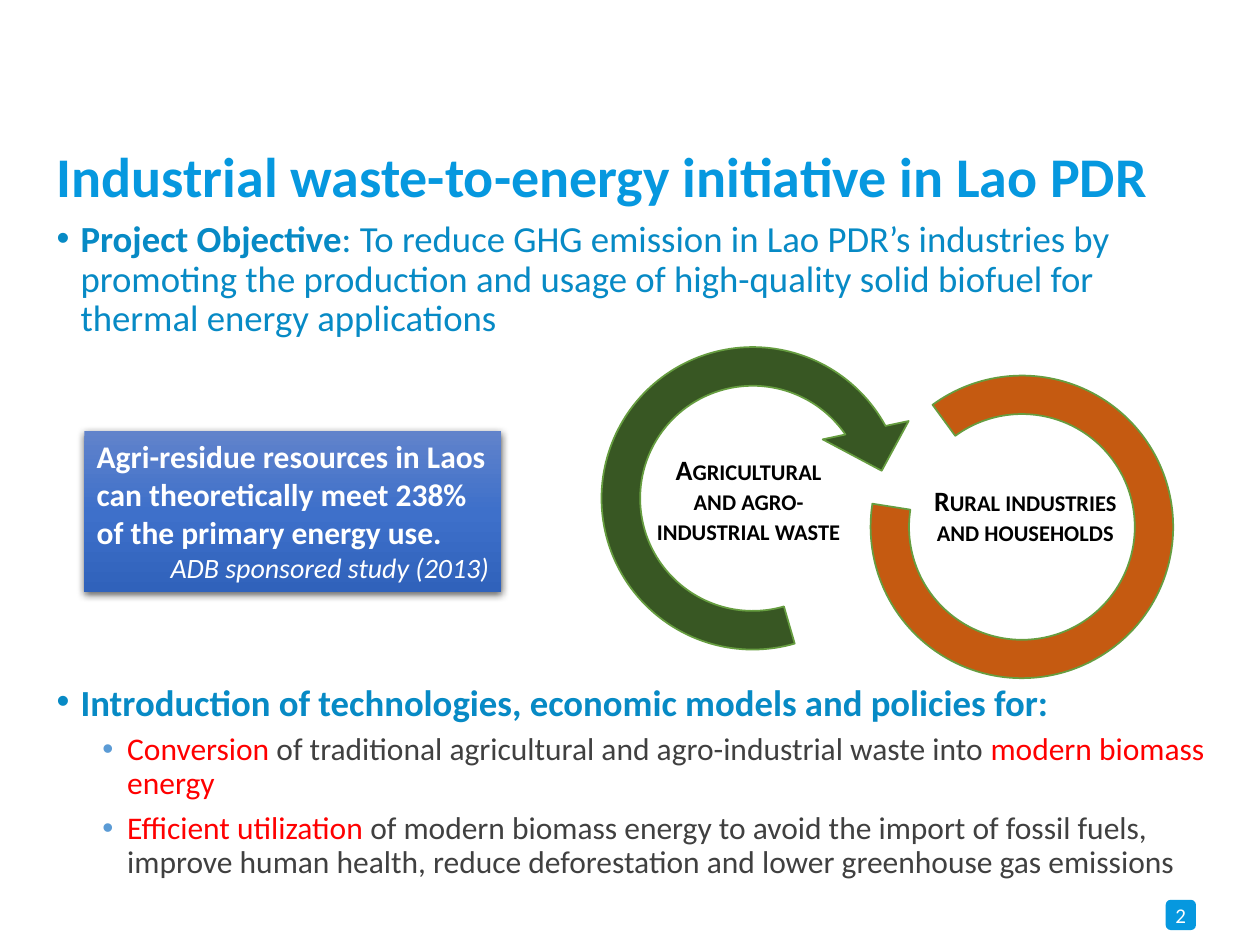
from dataclasses import dataclass

from pptx import Presentation
from pptx.dml.color import RGBColor
from pptx.enum.shapes import MSO_SHAPE as SHAPE
from pptx.enum.text import MSO_ANCHOR as ANCHOR, MSO_AUTO_SIZE as FIT, PP_ALIGN as ALIGN
from pptx.oxml import parse_xml
from pptx.oxml.ns import nsdecls
from pptx.util import Cm, Pt


@dataclass(frozen=True)
class Theme:
    font: str = "Calibri"
    title: str = "0698DF"
    lead: str = "078AC5"
    accent: str = "FF0000"
    body: str = "404040"
    bullet: str = "5B9BD5"
    white: str = "FFFFFF"
    black: str = "000000"
    green: str = "385723"
    orange: str = "C55A11"
    outline: str = "669D40"
    gradient: tuple = ((0, "6183CB"), (50, "3E70CA"), (100, "3062BB"))
    title_size: int = 32
    lead_size: int = 21
    text_size: int = 18
    label_size: int = 16
    number_size: int = 12


T = Theme()
TITLE = dict(size=T.title_size, color=T.title, bold=True)
LEAD = dict(size=T.lead_size, color=T.lead, bold=True)
LEAD_PLAIN = dict(LEAD, bold=False)
BODY = dict(size=T.text_size, color=T.body, bold=False)
ACCENT = dict(BODY, color=T.accent)
LABEL = dict(size=T.label_size, color=T.black, bold=True)
CALLOUT = dict(size=T.text_size, color=T.white, bold=True)
CREDIT = dict(size=T.label_size, color=T.white, bold=False, italic=True)
NUMBER = dict(size=T.number_size, color=T.white, bold=False)

LEAD_ITEM = dict(level=0, margin=0.48, hanging=0.48, color=T.lead)
SUB_ITEM = dict(level=1, margin=1.42, hanging=0.5, color=T.bullet)


def place(sp, box):
    for name, value in zip(("left", "top", "width", "height"), box):
        setattr(sp, name, Cm(value))


def set_frame(tf, anchor=ANCHOR.TOP, inset=None):
    tf.word_wrap, tf.auto_size, tf.vertical_anchor = True, FIT.NONE, anchor
    if inset is not None:
        for side in ("left", "top", "right", "bottom"):
            setattr(tf, f"margin_{side}", Cm(inset))


def add_bullet(p, level, margin, hanging, color):
    p.level = level
    pPr = p._p.get_or_add_pPr()
    pPr.set("marL", str(Cm(margin)))
    pPr.set("indent", str(-Cm(hanging)))
    for xml in (
        f'<a:buClr {nsdecls("a")}><a:srgbClr val="{color}"/></a:buClr>',
        f'<a:buFont {nsdecls("a")} typeface="Arial"/>',
        f'<a:buChar {nsdecls("a")} char="•"/>',
    ):
        pPr.append(parse_xml(xml))


def write(tf, index, runs, bullet=None, **formats):
    p = tf.add_paragraph() if index else tf.paragraphs[0]
    if bullet:
        add_bullet(p, **bullet)
    for name, value in formats.items():
        setattr(p, name, value)
    for text, style in runs:
        r = p.add_run()
        r.text = text
        r.font.name = T.font
        for name, value in style.items():
            if name == "color":
                r.font.color.rgb = RGBColor.from_string(value)
            else:
                setattr(r.font, name, Pt(value) if name == "size" else value)
    return p


def fill_list(sp, box, items):
    place(sp, box)
    set_frame(sp.text_frame)
    for i, (bullet, spacing, runs) in enumerate(items):
        write(sp.text_frame, i, runs, bullet, line_spacing=spacing,
              space_before=Pt(6 if i else 0), alignment=ALIGN.LEFT)


def add_shape(slide, kind, box, fill=None, line=None):
    sp = slide.shapes.add_shape(kind, *map(Cm, box))
    sp.shadow.inherit = False
    if fill:
        sp.fill.solid()
        sp.fill.fore_color.rgb = RGBColor.from_string(fill)
    if line:
        sp.line.color.rgb = RGBColor.from_string(line)
        sp.line.width = Pt(1)
    else:
        sp.line.fill.background()
    return sp


def add_ring(slide, kind, box, rotation, adjustments, color):
    sp = add_shape(slide, kind, box, color, T.outline)
    sp.rotation = rotation
    for i, value in enumerate(adjustments):
        sp.adjustments[i] = value


def add_label(slide, box, text):
    tf = slide.shapes.add_textbox(*map(Cm, box)).text_frame
    set_frame(tf, ANCHOR.MIDDLE, 0.03)
    p = write(tf, 0, [(text, LABEL)], alignment=ALIGN.CENTER, line_spacing=0.9)
    p.runs[0].font._element.set("cap", "small")


def add_callout(slide, box):
    sp = add_shape(slide, SHAPE.RECTANGLE, box)
    stops = "".join(f'<a:gs pos="{pos * 1000}"><a:srgbClr val="{color}"/></a:gs>'
                    for pos, color in T.gradient)
    spPr = sp._element.spPr
    spPr.ln.addprevious(parse_xml(
        f'<a:gradFill {nsdecls("a")} rotWithShape="1"><a:gsLst>{stops}</a:gsLst>'
        '<a:lin ang="5400000" scaled="0"/></a:gradFill>'))
    spPr.effectLst.append(parse_xml(
        f'<a:outerShdw {nsdecls("a")} blurRad="{Pt(4.5)}" dist="{Pt(1.5)}" dir="5400000" '
        f'algn="ctr" rotWithShape="0"><a:srgbClr val="{T.black}">'
        '<a:alpha val="63000"/></a:srgbClr></a:outerShdw>'))
    set_frame(sp.text_frame)
    write(sp.text_frame, 0, [("Agri-residue resources in Laos can theoretically meet 238% "
                              "of the primary energy use.", CALLOUT)], alignment=ALIGN.LEFT)
    write(sp.text_frame, 1, [("ADB sponsored study (2013)", CREDIT)], alignment=ALIGN.RIGHT)


def add_page_number(slide, box, number):
    sp = add_shape(slide, SHAPE.ROUNDED_RECTANGLE, box, T.title)
    set_frame(sp.text_frame, ANCHOR.MIDDLE, 0)
    write(sp.text_frame, 0, [(number, NUMBER)], alignment=ALIGN.CENTER)


def main():
    prs = Presentation()
    prs.slide_width, prs.slide_height = Cm(25.4), Cm(19.05)
    slide = prs.slides.add_slide(prs.slide_layouts[3])
    title, objective, technologies = slide.placeholders

    place(title, (0.89, 2.92, 24.51, 1.4))
    set_frame(title.text_frame, ANCHOR.MIDDLE)
    write(title.text_frame, 0, [("Industrial waste-to-energy initiative in Lao PDR", TITLE)],
          alignment=ALIGN.LEFT, line_spacing=0.9)

    fill_list(objective, (0.89, 4.32, 23.8, 2.79), [
        (LEAD_ITEM, 0.9, [
            ("Project Objective", LEAD),
            (": To reduce GHG emission in Lao PDR’s industries by promoting the production and "
             "usage of high-quality solid biofuel for thermal energy applications", LEAD_PLAIN)]),
    ])
    fill_list(technologies, (0.89, 13.74, 23.8, 4.37), [
        (LEAD_ITEM, 0.8, [
            ("Introduction of technologies, economic models and policies for:", LEAD)]),
        (SUB_ITEM, 0.9, [
            ("Conversion", ACCENT),
            (" of traditional agricultural and agro-industrial waste into ", BODY),
            ("modern biomass energy", ACCENT)]),
        (SUB_ITEM, 0.9, [
            ("Efficient utilization ", ACCENT),
            ("of modern biomass energy to avoid the import of fossil fuels, improve human "
             "health, reduce deforestation and lower greenhouse gas emissions", BODY)]),
    ])

    add_ring(slide, SHAPE.CIRCULAR_ARROW, (11.63, 6.5, 7.09, 7.09), 253.9,
             (0.11, 11.42, 45, 108, 0.125), T.green)
    add_label(slide, (13.11, 9.12, 3.96, 1.98), "Agricultural and agro-industrial waste")
    add_ring(slide, SHAPE.BLOCK_ARC, (17.55, 7.57, 6.1, 6.1), 233.8, (0, 189, 0.127), T.orange)
    add_label(slide, (18.69, 9.45, 3.96, 1.98), "Rural industries and households")

    add_callout(slide, (1.7, 8.69, 8.41, 3.25))
    add_page_number(slide, (23.5, 18.14, 0.61, 0.61), "2")
    prs.save("out.pptx")


if __name__ == "__main__":
    main()
